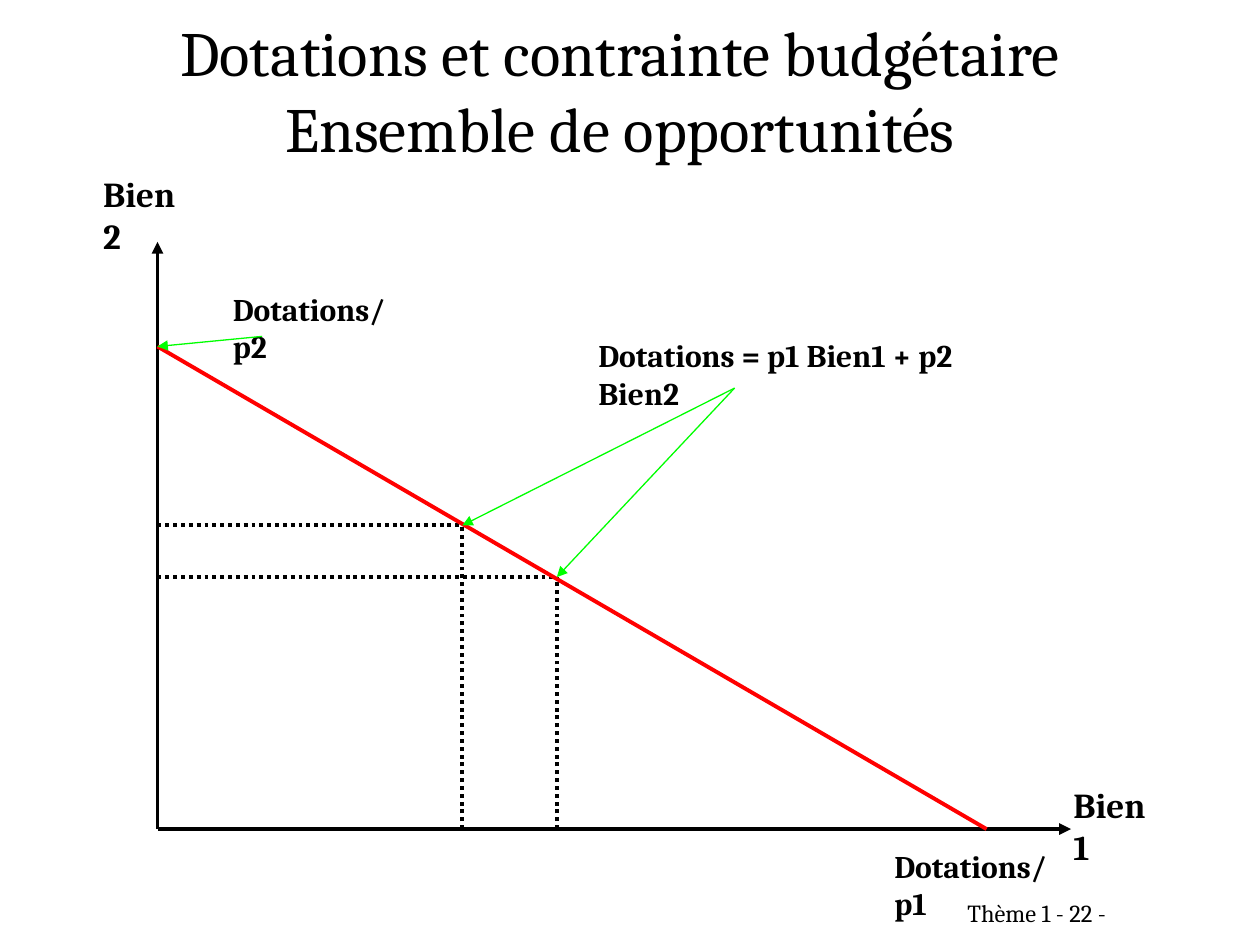
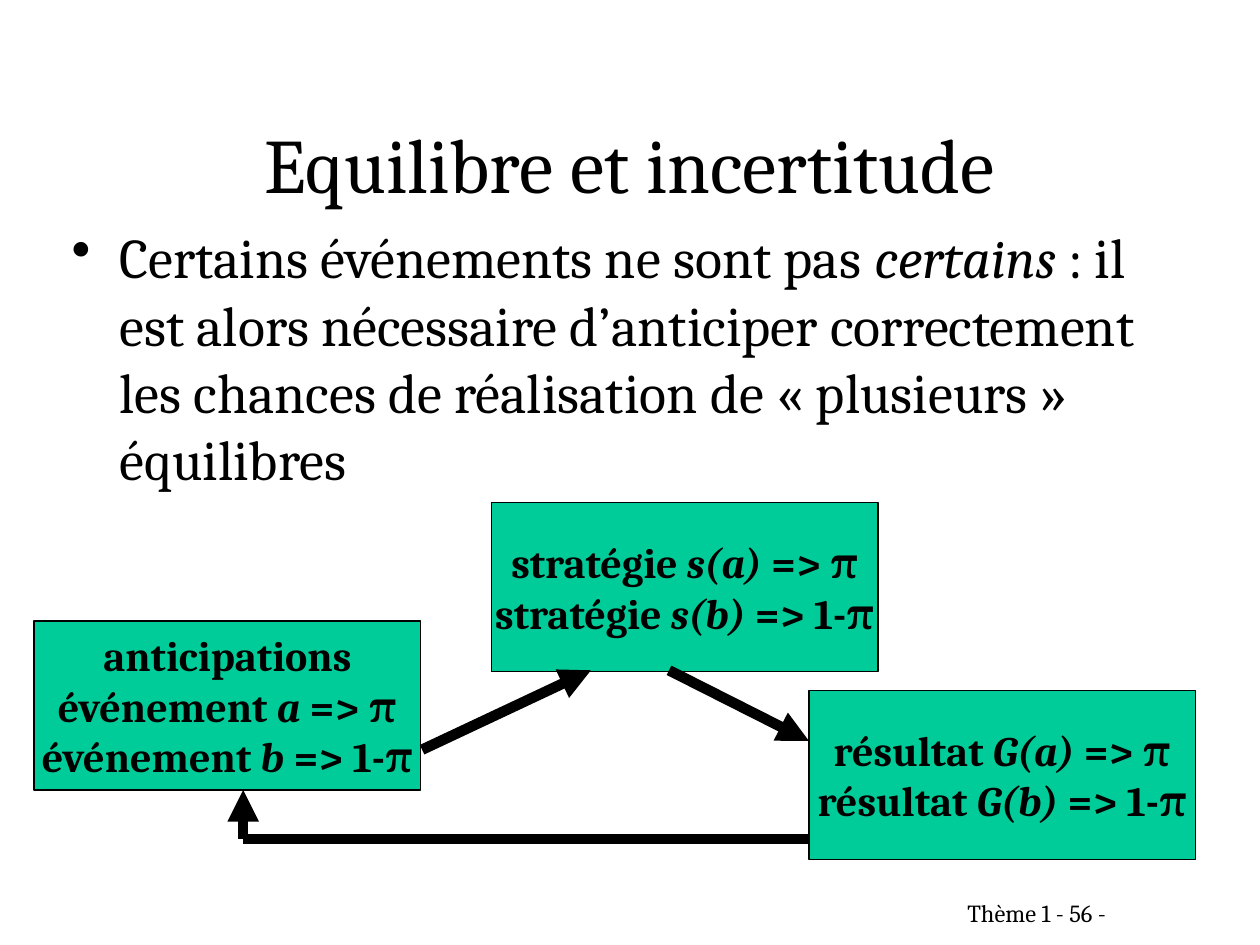
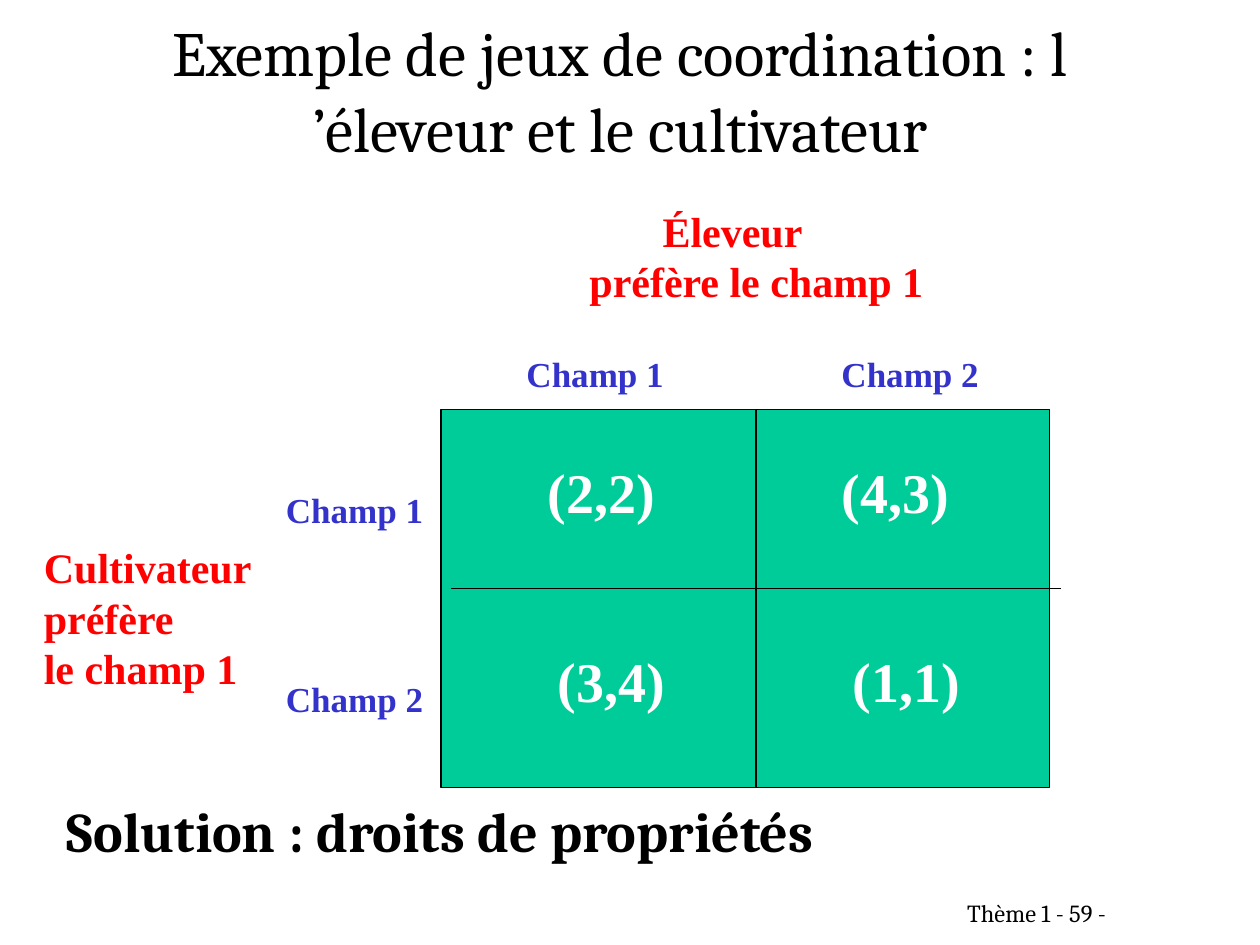
from pptx import Presentation
from pptx.dml.color import RGBColor
from pptx.enum.dml import MSO_LINE
from pptx.enum.shapes import MSO_CONNECTOR, MSO_SHAPE
from pptx.enum.text import MSO_ANCHOR, MSO_AUTO_SIZE, PP_ALIGN
from pptx.oxml.ns import qn
from pptx.util import Inches, Pt
from lxml import etree

BLACK = RGBColor(0x00, 0x00, 0x00)
WHITE = RGBColor(0xFF, 0xFF, 0xFF)
RED = RGBColor(0xFF, 0x00, 0x00)
LIME = RGBColor(0x00, 0xFF, 0x00)
TEAL = RGBColor(0x00, 0xCC, 0x99)
BLUE = RGBColor(0x33, 0x33, 0xCC)

MAIN_FONT = "Cambria"
GAME_FONT = "Times New Roman"
LEFT, CENTER = PP_ALIGN.LEFT, PP_ALIGN.CENTER
TOP, MIDDLE = MSO_ANCHOR.TOP, MSO_ANCHOR.MIDDLE
NO_AUTOFIT = MSO_AUTO_SIZE.NONE
STRAIGHT, RECTANGLE = MSO_CONNECTOR.STRAIGHT, MSO_SHAPE.RECTANGLE
DOTTED = MSO_LINE.ROUND_DOT
TITLE_ONLY = 5
HIGH_TITLE = (0.67, 0.25, 8.5, 0.92)


def write(tf, text, size=18, color=BLACK, font=MAIN_FONT, bold=False,
          align=LEFT, anchor=TOP, wrap=True, bullet=False, indents=()):
    """Fill a text frame, one paragraph a line, with *starred* parts in italics."""
    tf.word_wrap, tf.auto_size, tf.vertical_anchor = wrap, NO_AUTOFIT, anchor
    for i, line in enumerate(text.split("\n")):
        p = tf.paragraphs[0] if i == 0 else tf.add_paragraph()
        p.alignment = align
        pPr = p._p.get_or_add_pPr()
        if i < len(indents):
            pPr.set("marL", str(Inches(indents[i])))
        if bullet:
            pPr.set("marL", str(Inches(0.38)))
            pPr.set("indent", str(-Inches(0.38)))
            etree.SubElement(pPr, qn("a:buChar"), char="•")
        for j, part in enumerate(line.split("*")):
            r = p.add_run()
            r.text = part
            r.font.name, r.font.size, r.font.bold = font, Pt(size), bold
            r.font.italic = j % 2 == 1
            r.font.color.rgb = color


class Deck:
    """Hold the shared style and the current slide."""

    def __init__(self):
        """Open an empty 4:3 presentation."""
        self.prs = Presentation()
        self.prs.slide_width, self.prs.slide_height = Inches(10), Inches(7.5)
        self.s = None

    def slide(self, title, number, box=HIGH_TITLE, size=36):
        """Start a slide with its title and footer."""
        self.s = self.prs.slides.add_slide(self.prs.slide_layouts[TITLE_ONLY])
        sp = self.s.shapes.title
        sp.left, sp.top, sp.width, sp.height = map(Inches, box)
        write(sp.text_frame, title, size=size, align=CENTER, anchor=MIDDLE)
        self.text(f"Thème 1 - {number} - ", 7.25, 7.08, 2, 0.33, size=14, align=CENTER)

    def text(self, text, x, y, w, h, **style):
        """Add a text box."""
        sp = self.s.shapes.add_textbox(*map(Inches, (x, y, w, h)))
        write(sp.text_frame, text, **style)

    def box(self, x, y, w, h, text=""):
        """Add a teal rectangle with optional bold centred text."""
        sp = self.s.shapes.add_shape(RECTANGLE, *map(Inches, (x, y, w, h)))
        sp.shadow.inherit = False
        sp.fill.solid()
        sp.fill.fore_color.rgb = TEAL
        sp.line.color.rgb, sp.line.width = BLACK, Pt(0.75)
        if text:
            write(sp.text_frame, text, size=24, bold=True, align=CENTER,
                  anchor=MIDDLE, wrap=False)

    def line(self, start, end, color=BLACK, width=2.25, dash=None, arrow=False):
        """Add a straight line, with an arrowhead at its end if asked."""
        cxn = self.s.shapes.add_connector(STRAIGHT, *map(Inches, (*start, *end)))
        cxn.line.color.rgb, cxn.line.width = color, Pt(width)
        if dash:
            cxn.line.dash_style = dash
        if arrow:
            etree.SubElement(cxn.line._get_or_add_ln(), qn("a:tailEnd"), type="triangle")
        etree.SubElement(cxn._element.spPr, qn("a:effectLst"))


def budget_slide(deck):
    """Draw the budget line and its two sample baskets."""
    deck.slide("Dotations et contrainte budgétaire\nEnsemble de opportunités", 22)
    x0, y0 = origin = (1.25, 6.58)
    intercept = (x0, 2.75)
    baskets = [(4.42, 4.58), (3.67, 4.17)]

    for end in [(x0, 1.92), (8.5, y0)]:
        deck.line(origin, end, arrow=True)
    for x, y in baskets:
        deck.line((x0, y), (x, y), dash=DOTTED)
        deck.line((x, y0), (x, y), dash=DOTTED)
    deck.line(intercept, (7.83, y0), color=RED)

    for text, x, y in [("Bien 2", 0.72, 1.32), ("Bien 1", 8.42, 6.17)]:
        deck.text(text, x, y, 0.95, 0.43, size=20, bold=True)
    for text, x, y, w in [("Dotations/p2", 1.75, 2.25, 1.56),
                          ("Dotations/p1", 7, 6.67, 1.56),
                          ("Dotations = p1 Bien1 + p2 Bien2", 4.65, 2.62, 3.64)]:
        deck.text(text, x, y, w, 0.4, bold=True)

    deck.line((2.08, 2.67), intercept, color=LIME, width=0.75, arrow=True)
    for basket in baskets:
        deck.line((5.83, 3.08), basket, color=LIME, width=0.75, arrow=True)


def uncertainty_slide(deck):
    """Draw the loop of expectations, strategies and results."""
    deck.slide("Equilibre et incertitude", 56, box=(0.75, 0.67, 8.5, 1.25), size=44)
    deck.text("Certains événements ne sont pas *certains* : il est alors nécessaire "
              "d’anticiper correctement les chances de réalisation de « plusieurs » "
              "équilibres", 0.47, 1.72, 9.06, 2.2, size=32, bullet=True)
    for x, y, text in [
            (0.27, 4.93, "anticipations\névénement *a* => π\névénement *b* => 1-π"),
            (3.9, 3.99, "stratégie *s(a)* => π\nstratégie *s(b)* => 1-π"),
            (6.42, 5.48, "résultat *G(a)* => π\nrésultat *G(b)* => 1-π")]:
        deck.box(x, y, 3.07, 1.34, text)
    corner = (1.93, 6.66)
    for start, end, arrow in [((3.35, 5.95), (4.69, 5.32), True),
                              ((5.31, 5.32), (6.42, 5.88), True),
                              ((6.42, 6.66), corner, False),
                              (corner, (1.93, 6.27), True)]:
        deck.line(start, end, width=6, arrow=arrow)


def game_slide(deck):
    """Draw the payoff matrix of the coordination game."""
    deck.slide("Exemple de jeux de coordination : l ’éleveur et le cultivateur", 59)
    deck.box(3.5, 3.25, 4.83, 3)
    deck.line((6, 3.25), (6, 6.25), width=0.75)
    deck.line((3.58, 4.67), (8.42, 4.67), width=0.75)

    game = {"font": GAME_FONT, "bold": True}
    for text, x, y in [("(2,2)", 4.25, 3.58), ("(4,3)", 6.58, 3.58),
                       ("(3,4)", 4.33, 5.08), ("(1,1)", 6.67, 5.08)]:
        deck.text(text, x, y, 1.1, 0.63, size=32, color=WHITE, **game)
    for text, x, y in [("Champ 1", 4.08, 2.75), ("Champ 2", 6.58, 2.75),
                       ("Champ 1", 2.17, 3.83), ("Champ 2", 2.17, 5.33)]:
        deck.text(text, x, y, 1.35, 0.43, size=20, color=BLUE, **game)

    deck.text("Éleveur\npréfère le champ 1", 4.58, 1.58, 2.95, 0.9,
              size=24, color=RED, indents=(0.58,), **game)
    deck.text("Cultivateur\npréfère\nle champ 1", 0.25, 4.25, 1.93, 1.3,
              size=24, color=RED, **game)
    deck.text("Solution : droits de propriétés", 0.43, 6.27, 6.72, 0.64,
              size=32, bold=True)


def main():
    """Build and save the three slides."""
    deck = Deck()
    budget_slide(deck)
    uncertainty_slide(deck)
    game_slide(deck)
    deck.prs.save("out.pptx")


if __name__ == "__main__":
    main()
